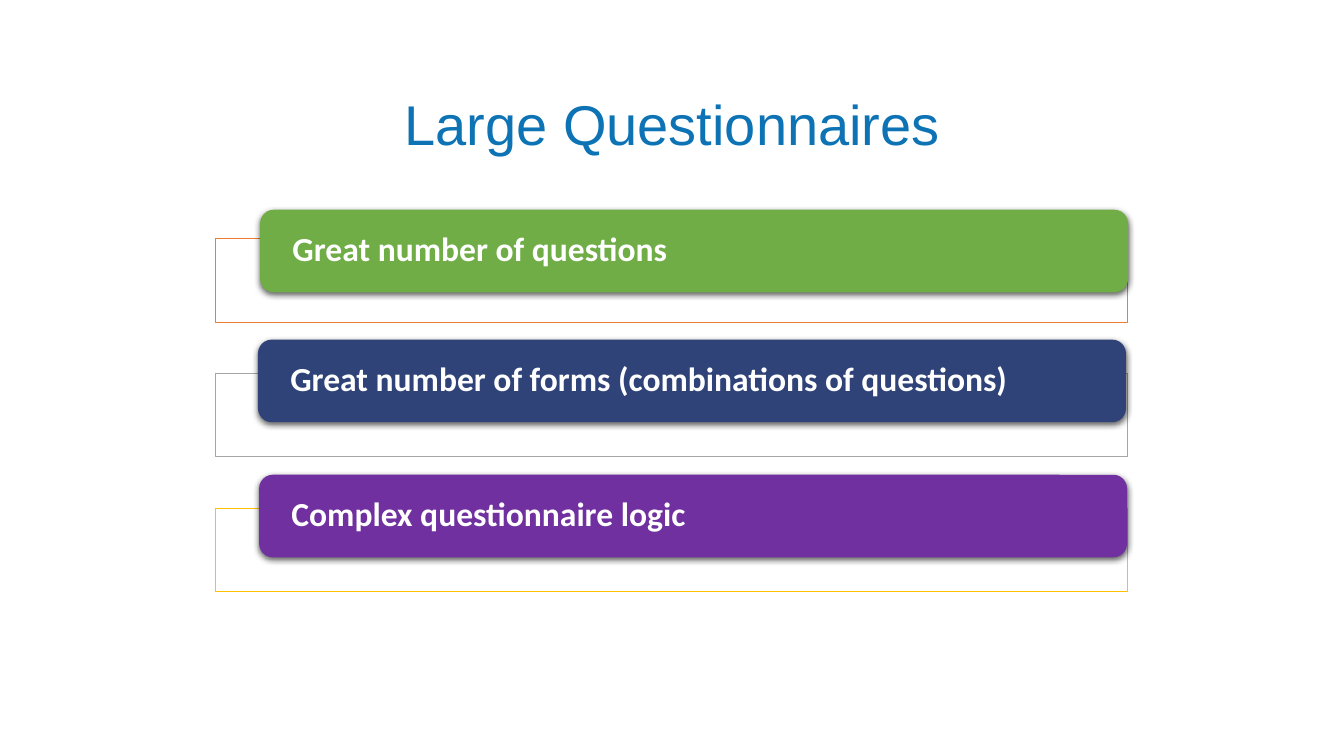
"""Build the Large Questionnaires slide with three framed banners."""
from dataclasses import dataclass

import lxml.etree
import pptx
import pptx.dml.color
import pptx.enum.shapes
import pptx.enum.text
import pptx.oxml
import pptx.oxml.ns
import pptx.util

Pt = pptx.util.Pt
RGB = pptx.dml.color.RGBColor.from_string
SHAPE = pptx.enum.shapes.MSO_SHAPE
ALIGN = pptx.enum.text.PP_ALIGN
MIDDLE = pptx.enum.text.MSO_ANCHOR.MIDDLE


@dataclass(frozen=True)
class Theme:
    title_color: str = "0D73B5"
    white: str = "FFFFFF"
    title_font: str = "Arial"
    body_font: str = "Calibri"
    title_size: float = 40
    body_size: float = 24
    line_spacing: float = 0.9


@dataclass(frozen=True)
class Banner:
    text: str
    fill: str
    frame_color: str
    left: float
    top: float


THEME = Theme()
FRAME_LEFT, FRAME_TOP, FRAME_WIDTH, FRAME_HEIGHT = 154, 170.5, 651, 59.5
FRAME_PITCH = 96.2
BANNER_WIDTH, BANNER_HEIGHT, BANNER_INSET = 620, 59, 20.2
BANNERS = [
    Banner("Great number of questions", "70AD47", "ED7D31", 185.8, 149.8),
    Banner("Great number of forms (combinations of questions)",
           "2F4378", "A5A5A5", 184.3, 242.6),
    Banner("Complex questionnaire logic", "7030A0", "FFC000", 185.1, 339.1),
]
SHADOW_XML = (
    f'<a:effectLst {pptx.oxml.ns.nsdecls("a")}>'
    '<a:outerShdw blurRad="57150" dist="19050" dir="5400000" algn="ctr" rotWithShape="0">'
    '<a:srgbClr val="000000"><a:alpha val="63000"/></a:srgbClr>'
    '</a:outerShdw></a:effectLst>'
)


def add_box(slide, kind, left: float, top: float, width: float, height: float, fill: str):
    sp = slide.shapes.add_shape(kind, Pt(left), Pt(top), Pt(width), Pt(height))
    sp.shadow.inherit = False
    sp.fill.solid()
    sp.fill.fore_color.rgb = RGB(fill)
    return sp


def set_text(sp, text: str, font: str, size: float, color: str, align, bold: bool) -> None:
    tf = sp.text_frame
    tf.word_wrap = True
    tf.vertical_anchor = MIDDLE
    tf.text = text
    p = tf.paragraphs[0]
    p.alignment = align
    p.line_spacing = THEME.line_spacing
    p.space_before = Pt(0)
    p.font.name, p.font.size, p.font.bold = font, Pt(size), bold
    p.font.color.rgb = RGB(color)


def add_frame(slide, top: float, color: str) -> None:
    sp = add_box(slide, SHAPE.RECTANGLE, FRAME_LEFT, top, FRAME_WIDTH, FRAME_HEIGHT, THEME.white)
    sp.line.color.rgb = RGB(color)
    sp.line.width = Pt(0.5)
    fill_color = sp.element.spPr.find(
        f'{pptx.oxml.ns.qn("a:solidFill")}/{pptx.oxml.ns.qn("a:srgbClr")}')
    lxml.etree.SubElement(fill_color, pptx.oxml.ns.qn("a:alpha"), val="90000")


def add_banner(slide, banner: Banner) -> None:
    sp = add_box(slide, SHAPE.ROUNDED_RECTANGLE, banner.left, banner.top,
                 BANNER_WIDTH, BANNER_HEIGHT, banner.fill)
    sp.line.fill.background()
    spPr = sp.element.spPr
    spPr.replace(spPr.find(pptx.oxml.ns.qn("a:effectLst")), pptx.oxml.parse_xml(SHADOW_XML))
    tf = sp.text_frame
    tf.margin_left = tf.margin_right = Pt(BANNER_INSET)
    tf.margin_top = tf.margin_bottom = 0
    set_text(sp, banner.text, THEME.body_font, THEME.body_size, THEME.white, ALIGN.LEFT, True)


def main() -> None:
    prs = pptx.Presentation()
    prs.slide_width, prs.slide_height = Pt(960), Pt(540)
    slide = prs.slides.add_slide(prs.slide_layouts[5])
    title = slide.shapes.title
    title.left, title.top, title.width, title.height = Pt(79), Pt(64), Pt(802), Pt(54)
    set_text(title, "Large Questionnaires", THEME.title_font, THEME.title_size,
             THEME.title_color, ALIGN.CENTER, False)
    for i, banner in enumerate(BANNERS):
        add_frame(slide, FRAME_TOP + i * FRAME_PITCH, banner.frame_color)
        add_banner(slide, banner)
    prs.save("out.pptx")


if __name__ == "__main__":
    main()
